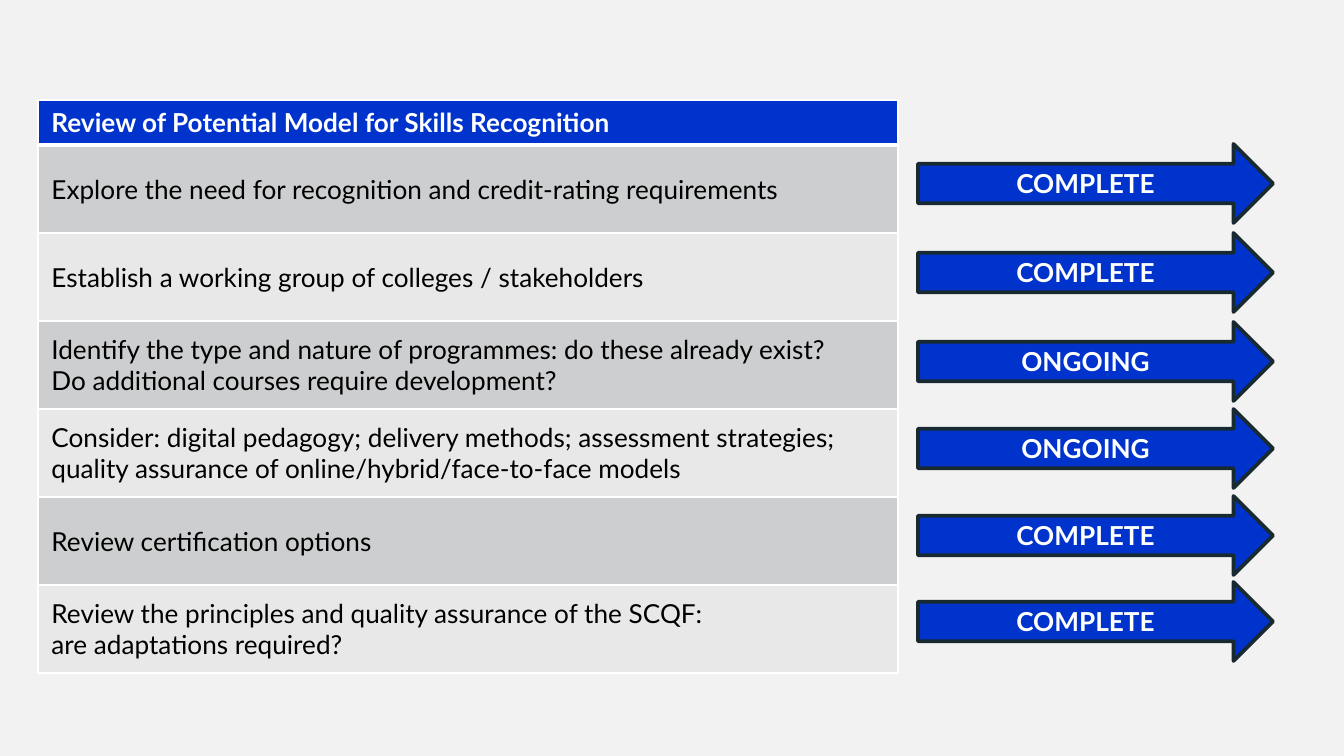
from dataclasses import dataclass

from lxml.etree import SubElement
from pptx import Presentation
from pptx.dml.color import RGBColor
from pptx.enum.shapes import MSO_SHAPE as Shape
from pptx.enum.text import MSO_ANCHOR as Anchor, PP_ALIGN as Align
from pptx.oxml.ns import qn
from pptx.slide import Slide
from pptx.table import _Cell as Cell
from pptx.text.text import TextFrame
from pptx.util import Emu, Pt

EMU_PER_PX = 914400 / 134.4
BLUE = RGBColor(0x00, 0x33, 0xCC)
OUTLINE = RGBColor(0x18, 0x29, 0x30)
DARK_BAND = RGBColor(0xCD, 0xCE, 0xCF)
LIGHT_BAND = RGBColor(0xE8, 0xE8, 0xE9)
BACKGROUND = RGBColor(0xF2, 0xF2, 0xF2)
WHITE = RGBColor(0xFF, 0xFF, 0xFF)
BLACK = RGBColor(0x00, 0x00, 0x00)

TABLE_LEFT, TABLE_TOP, TABLE_WIDTH = 38, 100, 860
HEADER_HEIGHT, ROW_HEIGHT = 45, 88
ARROW_LEFT, ARROW_WIDTH, ARROW_HEIGHT = 918, 355, 79
HEADING = "Review of Potential Model for Skills Recognition"


@dataclass(frozen=True)
class Task:
    description: str
    status: str
    arrow_top: int


TASKS = [
    Task("Explore the need for recognition and credit-rating requirements", "COMPLETE", 144),
    Task("Establish a working group of colleges / stakeholders", "COMPLETE", 233),
    Task(
        "Identify the type and nature of programmes: do these already exist?\n"
        "Do additional courses require development?",
        "ONGOING",
        322,
    ),
    Task(
        "Consider: digital pedagogy; delivery methods; assessment strategies; "
        "quality assurance of online/hybrid/face-to-face models",
        "ONGOING",
        409,
    ),
    Task("Review certification options", "COMPLETE", 496),
    Task(
        "Review the principles and quality assurance of the SCQF:\nare adaptations required?",
        "COMPLETE",
        582,
    ),
]


def px(length: int) -> Emu:
    return Emu(round(length * EMU_PER_PX))


def write(frame: TextFrame, text: str, color: RGBColor, bold: bool, align: Align) -> None:
    frame.text = text
    for paragraph in frame.paragraphs:
        paragraph.alignment = align
        paragraph.font.name = "Lato"
        paragraph.font.size = Pt(14)
        paragraph.font.bold = bold
        paragraph.font.color.rgb = color


def add_borders(cell: Cell, top: int, bottom: int) -> None:
    properties = cell._tc.get_or_add_tcPr()
    for side, width in (("L", 1), ("R", 1), ("T", top), ("B", bottom)):
        border = SubElement(properties, qn(f"a:ln{side}"), w=str(Pt(width)))
        fill = SubElement(border, qn("a:solidFill"))
        SubElement(fill, qn("a:srgbClr"), val=str(WHITE))


def fill_cell(
    cell: Cell, text: str, fill: RGBColor, color: RGBColor, bold: bool, top: int, bottom: int
) -> None:
    add_borders(cell, top, bottom)
    cell.fill.solid()
    cell.fill.fore_color.rgb = fill
    cell.vertical_anchor = Anchor.MIDDLE
    write(cell.text_frame, text, color, bold, Align.LEFT)


def add_task_table(slide: Slide) -> None:
    height = HEADER_HEIGHT + ROW_HEIGHT * len(TASKS)
    table = slide.shapes.add_table(
        len(TASKS) + 1, 1, px(TABLE_LEFT), px(TABLE_TOP), px(TABLE_WIDTH), px(height)
    ).table
    table.rows[0].height = px(HEADER_HEIGHT)
    fill_cell(table.cell(0, 0), HEADING, BLUE, WHITE, True, 1, 3)
    for number, task in enumerate(TASKS, start=1):
        table.rows[number].height = px(ROW_HEIGHT)
        band = DARK_BAND if number % 2 else LIGHT_BAND
        top = 3 if number == 1 else 1
        fill_cell(table.cell(number, 0), task.description, band, BLACK, False, top, 1)


def add_status_arrow(slide: Slide, task: Task) -> None:
    arrow = slide.shapes.add_shape(
        Shape.RIGHT_ARROW, px(ARROW_LEFT), px(task.arrow_top), px(ARROW_WIDTH), px(ARROW_HEIGHT)
    )
    arrow.shadow.inherit = False
    arrow.fill.solid()
    arrow.fill.fore_color.rgb = BLUE
    arrow.line.color.rgb = OUTLINE
    arrow.line.width = Pt(2)
    SubElement(arrow.line._get_or_add_ln(), qn("a:round"))
    arrow.text_frame.vertical_anchor = Anchor.MIDDLE
    write(arrow.text_frame, task.status, WHITE, True, Align.CENTER)


def main() -> None:
    deck = Presentation()
    deck.slide_width, deck.slide_height = px(1344), px(756)
    slide = deck.slides.add_slide(deck.slide_layouts[6])
    slide.background.fill.solid()
    slide.background.fill.fore_color.rgb = BACKGROUND
    add_task_table(slide)
    for task in TASKS:
        add_status_arrow(slide, task)
    deck.save("out.pptx")


if __name__ == "__main__":
    main()
